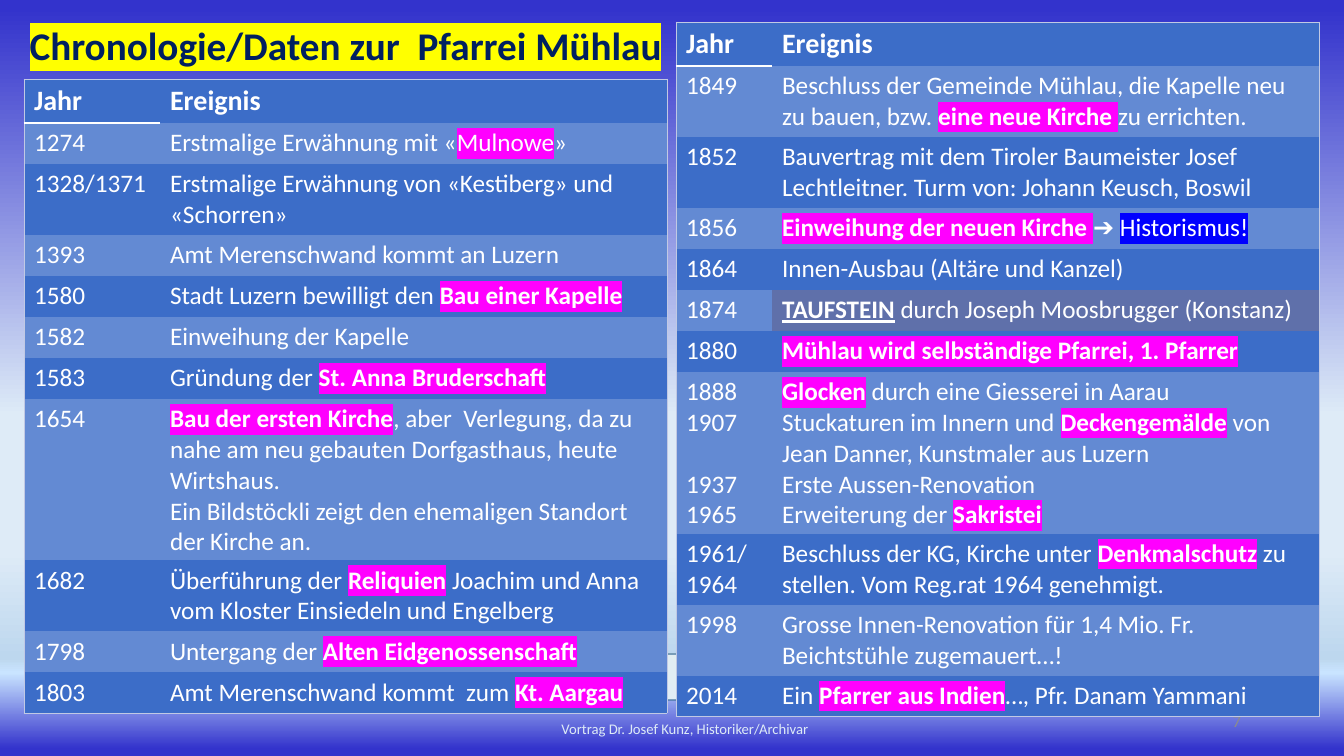
from dataclasses import dataclass

from lxml.etree import SubElement
from pptx import Presentation
from pptx.dml.color import RGBColor
from pptx.enum.shapes import MSO_SHAPE
from pptx.enum.text import MSO_ANCHOR, PP_ALIGN
from pptx.oxml.ns import qn
from pptx.util import Emu, Pt


@dataclass(frozen=True)
class Theme:
    font: str = "Calibri"
    white: str = "FFFFFF"
    navy: str = "002060"
    grey: str = "8C8C8C"
    pale: str = "DEEBF7"
    yellow: str = "FFFF00"
    magenta: str = "FF00FF"
    blue: str = "0000FF"
    row_dark: str = "3C6DC8"
    row_light: str = "638AD3"
    row_accent: str = "5F70AA"
    border: str = "C1C9E4"
    ellipse_line: str = "43739E"
    title_size: float = 28
    header_size: float = 20
    body_size: float = 18
    number_size: float = 12
    footer_size: float = 10.5
    background: tuple = ((1, "3333CC"), (55, "DEEBF7"), (73, "DEEBF7"),
                         (87, "BDD7EE"), (89, "C9E4FF"), (99, "3333CC"))
    ellipse: tuple = ((10, "FFFFCC"), (55, "DEEBF7"), (71, "C9E4FF"), (73, "DEEBF7"),
                      (74, "BDD7EE"), (74, "3333CC"), (96, "BDD7EE"))


THEME = Theme()
NO_TABLE_STYLE = "{2D5ABB26-0587-4C30-8999-92F81FD0307C}"
HEADER_HEIGHT, ROW_HEIGHT, LINE_HEIGHT = 43, 41, 30
RUN_STYLES = {
    "plain": ({}, None),
    "bold": ({"bold": True}, None),
    "key": ({"bold": True}, THEME.magenta),
    "name": ({}, THEME.magenta),
    "note": ({}, THEME.blue),
    "underlined": ({"bold": True, "underline": True}, None),
    "title": ({"bold": True}, THEME.yellow),
}


def px(length):
    return Emu(round(length * 914400 / 100.8))


def set_values(target, values):
    for name, value in values.items():
        setattr(target, name, value)


class SlideBuilder:
    def __init__(self, presentation, theme):
        self.theme = theme
        self.slide = presentation.slides.add_slide(presentation.slide_layouts[6])

    def gradient(self, fill, stops, angle):
        fill.gradient()
        gradient = fill._xPr.find(qn("a:gradFill"))
        for child in list(gradient):
            gradient.remove(child)
        stop_list = SubElement(gradient, qn("a:gsLst"))
        for position, color in stops:
            stop = SubElement(stop_list, qn("a:gs"), pos=str(position * 1000))
            SubElement(stop, qn("a:srgbClr"), val=color)
        SubElement(gradient, qn("a:lin"), ang=str(angle * 60000), scaled="0")

    def background(self):
        self.gradient(self.slide.background.fill, self.theme.background, 90)

    def ellipse(self, left, top, width, height):
        shape = self.slide.shapes.add_shape(
            MSO_SHAPE.OVAL, px(left), px(top), px(width), px(height))
        shape.shadow.inherit = False
        self.gradient(shape.fill, self.theme.ellipse, 135)
        shape.line.color.rgb = RGBColor.from_string(self.theme.ellipse_line)
        shape.line.width = Pt(1)

    def run(self, paragraph, text, size, color, style="plain"):
        values, highlight = RUN_STYLES[style]
        run = paragraph.add_run()
        run.text = text
        set_values(run.font, {"size": Pt(size), "bold": False} | values)
        run.font.color.rgb = RGBColor.from_string(color)
        if highlight:
            mark = SubElement(run._r.get_or_add_rPr(), qn("a:highlight"))
            SubElement(mark, qn("a:srgbClr"), val=highlight)
        run.font.name = self.theme.font

    def text(self, left, top, width, height, text, size, color,
             alignment=PP_ALIGN.CENTER, anchor=MSO_ANCHOR.MIDDLE, style="plain"):
        box = self.slide.shapes.add_textbox(px(left), px(top), px(width), px(height))
        set_values(box.text_frame, {"word_wrap": True, "vertical_anchor": anchor})
        paragraph = box.text_frame.paragraphs[0]
        paragraph.alignment = alignment
        self.run(paragraph, text, size, color, style)

    def cell(self, cell, paragraphs, fill, size):
        cell.fill.solid()
        cell.fill.fore_color.rgb = RGBColor.from_string(fill)
        frame = cell.text_frame
        for index, parts in enumerate(paragraphs):
            paragraph = frame.add_paragraph() if index else frame.paragraphs[0]
            for part in parts:
                if part is GAP:
                    paragraph.space_before = Pt(22)
                    continue
                style, text = part if isinstance(part, tuple) else ("plain", part)
                self.run(paragraph, text, size, self.theme.white, style)

    def borders(self, cell, edges):
        properties = cell._tc.get_or_add_tcPr()
        for index, side in enumerate(side for side in "LRTB" if side in edges):
            color, width = edges[side]
            line = SubElement(properties, qn(f"a:ln{side}"), w=str(Pt(width)))
            fill = SubElement(line, qn("a:solidFill"))
            SubElement(fill, qn("a:srgbClr"), val=color)
            properties.insert(index, line)

    def table(self, left, top, widths, events):
        theme = self.theme
        heights = [HEADER_HEIGHT] + [ROW_HEIGHT + (event[0] - 1) * LINE_HEIGHT for event in events]
        table = self.slide.shapes.add_table(
            len(heights), 2, px(left), px(top), px(sum(widths)), px(sum(heights))).table
        set_values(table, {"first_row": False, "horz_banding": False})
        table._tbl.tblPr.find(qn("a:tableStyleId")).text = NO_TABLE_STYLE
        for column, width in zip(table.columns, widths):
            column.width = px(width)
        for row, height in zip(table.rows, heights):
            row.height = px(height)
        header = (1, [[("bold", "Jahr")]], [[("bold", "Ereignis")]])
        thin = (theme.border, 0.5)
        for row, (_, *contents) in enumerate([header, *events]):
            for column, paragraphs in enumerate(contents):
                cell = table.cell(row, column)
                fill = theme.row_light if row % 2 else theme.row_dark
                if ("underlined", "TAUFSTEIN") in paragraphs[0]:
                    fill = theme.row_accent
                self.cell(cell, paragraphs, fill, theme.body_size if row else theme.header_size)
                edges = {"R" if column else "L": thin}
                if row == 0:
                    edges["T"] = thin
                    if column == 0:
                        edges["B"] = (theme.white, 1.5)
                if row == len(events):
                    edges["B"] = thin
                self.borders(cell, edges)


GAP = object()
EARLY_EVENTS = [
    (1, [["1274"]], [["Erstmalige Erwähnung mit «", ("name", "Mulnowe"), "»"]]),
    (2, [["1328/1371"]], [["Erstmalige Erwähnung von «Kestiberg» und «Schorren»"]]),
    (1, [["1393"]], [["Amt Merenschwand kommt an Luzern"]]),
    (1, [["1580"]], [["Stadt Luzern bewilligt den ", ("key", "Bau einer Kapelle")]]),
    (1, [["1582"]], [["Einweihung der Kapelle"]]),
    (1, [["1583"]], [["Gründung der ", ("key", "St. Anna Bruderschaft")]]),
    (5, [["1654"]], [
        [("key", "Bau der ersten Kirche"),
         ", aber  Verlegung, da zu nahe am neu gebauten Dorfgasthaus, heute Wirtshaus."],
        ["Ein Bildstöckli zeigt den ehemaligen Standort der Kirche an."]]),
    (2, [["1682"]], [["Überführung der ", ("key", "Reliquien"),
                      " Joachim und Anna vom Kloster Einsiedeln und Engelberg"]]),
    (1, [["1798"]], [["Untergang der ", ("key", "Alten Eidgenossenschaft")]]),
    (1, [["1803"]], [["Amt Merenschwand kommt  zum ", ("key", "Kt. Aargau")]]),
]
LATE_EVENTS = [
    (2, [["1849"]], [["Beschluss der Gemeinde Mühlau, die Kapelle neu zu bauen, bzw. ",
                      ("key", "eine neue Kirche "), "zu errichten."]]),
    (2, [["1852"]], [["Bauvertrag mit dem Tiroler Baumeister Josef Lechtleitner. "
                      "Turm von: Johann Keusch, Boswil"]]),
    (1, [["1856"]], [[("key", "Einweihung der neuen Kirche "), "➔ ", ("note", "Historismus!")]]),
    (1, [["1864"]], [["Innen-Ausbau (Altäre und Kanzel)"]]),
    (1, [["1874"]], [[("underlined", "TAUFSTEIN"), " durch Joseph Moosbrugger (Konstanz)"]]),
    (1, [["1880"]], [[("key", "Mühlau wird selbständige Pfarrei, 1. Pfarrer")]]),
    (5, [["1888"], ["1907"], [GAP, "1937"], ["1965"]], [
        [("key", "Glocken"), " durch eine Giesserei in Aarau"],
        ["Stuckaturen im Innern und ", ("key", "Deckengemälde"), " von"],
        ["Jean Danner, Kunstmaler aus Luzern"],
        ["Erste Aussen-Renovation"],
        ["Erweiterung der ", ("key", "Sakristei")]]),
    (2, [["1961/"], ["1964"]], [["Beschluss der KG, Kirche unter ", ("key", "Denkmalschutz"),
                                 " zu stellen. Vom Reg.rat 1964 genehmigt."]]),
    (2, [["1998"]], [["Grosse Innen-Renovation für 1,4 Mio. Fr."], ["Beichtstühle zugemauert…!"]]),
    (1, [["2014"]], [["Ein ", ("key", "Pfarrer aus Indien"), "…, Pfr. Danam Yammani"]]),
]


def main():
    presentation = Presentation()
    set_values(presentation, {"slide_width": px(1344), "slide_height": px(756)})
    builder = SlideBuilder(presentation, THEME)
    builder.background()
    builder.ellipse(93, 654, 1159, 46)
    builder.text(438, 716, 494, 26, "Vortrag Dr. Josef Kunz, Historiker/Archivar",
                 THEME.footer_size, THEME.pale)
    builder.text(949, 701, 302, 40, "7", THEME.number_size, THEME.grey, PP_ALIGN.RIGHT)
    builder.text(9, 16, 673, 57, "Chronologie/Daten zur  Pfarrei Mühlau", THEME.title_size,
                 THEME.navy, anchor=MSO_ANCHOR.TOP, style="title")
    builder.table(24, 79, (136, 507), EARLY_EVENTS)
    builder.table(676, 22, (96, 547), LATE_EVENTS)
    presentation.save("out.pptx")


if __name__ == "__main__":
    main()
